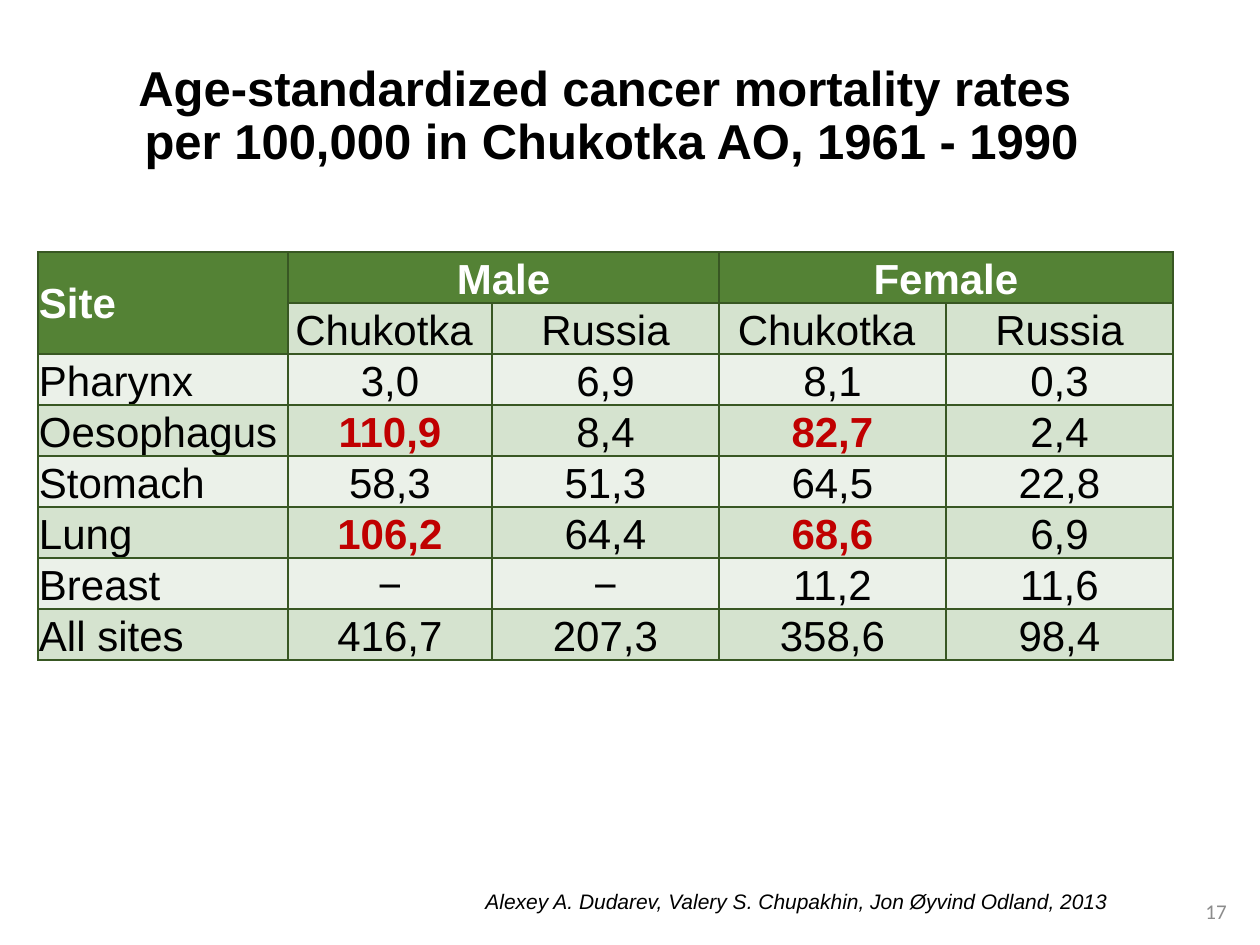
from dataclasses import dataclass

from lxml import etree
from pptx import Presentation
from pptx import util as u
from pptx.dml.color import RGBColor
from pptx.enum import text
from pptx.oxml.ns import qn


@dataclass(frozen=True)
class Theme:
    font: str = "Arial"
    number_font: str = "Calibri"
    ink: str = "000000"
    white: str = "FFFFFF"
    muted: str = "8C8C8C"
    accent: str = "C00000"
    header: str = "548235"
    border: str = "385723"
    bands: tuple = ("EBF1E9", "D5E3CF")
    title_size: int = 28
    table_size: int = 24
    small_size: int = 12


THEME = Theme()
PX_PER_INCH = 126
LEFT, CENTER, RIGHT = text.PP_ALIGN.LEFT, text.PP_ALIGN.CENTER, text.PP_ALIGN.RIGHT
MIDDLE, BOTTOM = text.MSO_ANCHOR.MIDDLE, text.MSO_ANCHOR.BOTTOM

COLUMN_WIDTHS = (250, 204, 227, 227, 227)
ROW_HEIGHT = 51
ROWS = (
    ("Site", "Male", "", "Female", ""),
    ("", "Chukotka ", "Russia", "Chukotka ", "Russia"),
    ("Pharynx", "3,0", "6,9", "8,1", "0,3"),
    ("Oesophagus", "110,9", "8,4", "82,7", "2,4"),
    ("Stomach", "58,3", "51,3", "64,5", "22,8"),
    ("Lung", "106,2", "64,4", "68,6", "6,9"),
    ("Breast", "−", "−", "11,2", "11,6"),
    ("All sites", "416,7", "207,3", "358,6", "98,4"),
)
HIGHLIGHTS = {"110,9", "82,7", "106,2", "68,6"}


def px(value):
    return u.Emu(round(value * 914400 / PX_PER_INCH))


def write(frame, words, size, color=THEME.ink, font=THEME.font, bold=False,
          italic=False, align=LEFT, spacing=None):
    paragraph = frame.paragraphs[0]
    paragraph.text = words
    paragraph.alignment = align
    paragraph.line_spacing = spacing
    for run in paragraph.runs:
        run.font.name = font
        run.font.size = u.Pt(size)
        run.font.bold = bold
        run.font.italic = italic
        run.font.color.rgb = RGBColor.from_string(color)
    for line_break in paragraph._p.findall(qn("a:br")):
        etree.SubElement(line_break, qn("a:rPr"), sz=str(size * 100))


def draw_borders(cell):
    properties = cell._tc.get_or_add_tcPr()
    for index, side in enumerate(("lnL", "lnR", "lnT", "lnB")):
        line = etree.Element(qn(f"a:{side}"), w=str(u.Pt(1)))
        fill = etree.SubElement(line, qn("a:solidFill"))
        etree.SubElement(fill, qn("a:srgbClr"), val=THEME.border)
        properties.insert(index, line)


def place_title(slide, left, top, width, height):
    title = slide.shapes.title
    title.left, title.top, title.width, title.height = map(px, (left, top, width, height))
    frame = title.text_frame
    frame.word_wrap = True
    frame.auto_size = text.MSO_AUTO_SIZE.NONE
    frame.vertical_anchor = MIDDLE
    write(frame, "Age-standardized cancer mortality rates \vper 100,000 in Chukotka AO, 1961 - 1990",
          THEME.title_size, bold=True, align=CENTER, spacing=0.9)


def place_mortality_table(slide, left, top):
    width, height = sum(COLUMN_WIDTHS), ROW_HEIGHT * len(ROWS)
    table = slide.shapes.add_table(len(ROWS), len(COLUMN_WIDTHS),
                                   px(left), px(top), px(width), px(height)).table
    for column, column_width in zip(table.columns, COLUMN_WIDTHS):
        column.width = px(column_width)
    for row in table.rows:
        row.height = px(ROW_HEIGHT)
    for first, last in (((0, 0), (1, 0)), ((0, 1), (0, 2)), ((0, 3), (0, 4))):
        table.cell(*first).merge(table.cell(*last))

    for row_index, values in enumerate(ROWS):
        for column_index, value in enumerate(values):
            cell = table.cell(row_index, column_index)
            is_header = row_index == 0 or (row_index == 1 and column_index == 0)
            is_highlight = value in HIGHLIGHTS
            cell.margin_left = cell.margin_right = cell.margin_top = px(1)
            cell.margin_bottom = 0
            cell.vertical_anchor = MIDDLE if value == "Site" else BOTTOM
            cell.fill.solid()
            cell.fill.fore_color.rgb = RGBColor.from_string(
                THEME.header if is_header else THEME.bands[row_index % 2]
                if row_index < 2 else THEME.bands[row_index % 2])
            draw_borders(cell)
            if value:
                color = THEME.white if is_header else THEME.accent if is_highlight else THEME.ink
                write(cell.text_frame, value, THEME.table_size, color=color,
                      bold=is_header or is_highlight,
                      align=CENTER if column_index else LEFT)


def place_credit(slide, left, top, width, height):
    frame = slide.shapes.add_textbox(*map(px, (left, top, width, height))).text_frame
    frame.word_wrap = False
    frame.auto_size = text.MSO_AUTO_SIZE.SHAPE_TO_FIT_TEXT
    write(frame, "Alexey A. Dudarev, Valery S. Chupakhin, Jon Øyvind Odland, 2013",
          THEME.small_size, italic=True)


def place_page_number(slide, left, top, width, height):
    frame = slide.shapes.add_textbox(*map(px, (left, top, width, height))).text_frame
    frame.word_wrap = True
    frame.vertical_anchor = MIDDLE
    write(frame, "17", THEME.small_size, color=THEME.muted, font=THEME.number_font, align=RIGHT)


def main():
    presentation = Presentation()
    presentation.slide_width, presentation.slide_height = px(1260), px(945)
    slide = presentation.slides.add_slide(presentation.slide_layouts[5])
    place_title(slide, 50, 50, 1123, 134)
    place_mortality_table(slide, 38, 252)
    place_credit(slide, 473, 882, 651, 38)
    place_page_number(slide, 955, 886, 284, 50)
    presentation.save("out.pptx")


if __name__ == "__main__":
    main()
